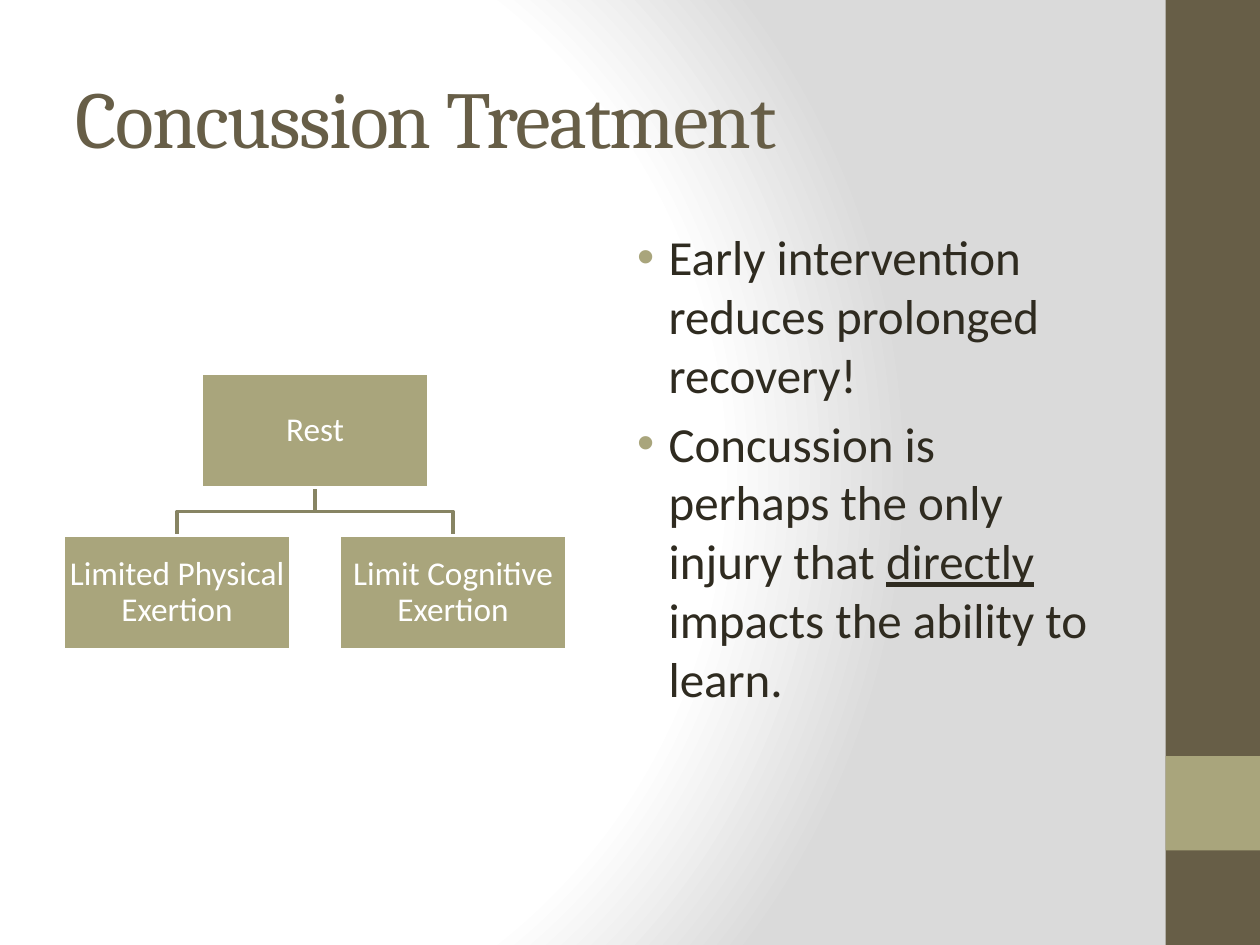
from lxml.etree import SubElement
from pptx import Presentation
from pptx.dml.color import RGBColor
from pptx.enum.shapes import MSO_SHAPE
from pptx.enum.text import MSO_ANCHOR, MSO_AUTO_SIZE, PP_ALIGN
from pptx.oxml import parse_xml
from pptx.oxml.ns import nsdecls, qn
from pptx.util import Pt

COLORS = {
    "brown": "675E47",
    "olive": "A9A57C",
    "line": "878463",
    "text": "2F2B20",
    "white": "FFFFFF",
    "gray": "DADADA",
}


def rgb(name):
    return RGBColor.from_string(COLORS[name])


def style_run(r, font, size, color):
    r.font.name = font
    r.font.size = Pt(size)
    r.font.color.rgb = rgb(color)


def add_rect(s, x, y, w, h, fill, line=None):
    sp = s.shapes.add_shape(MSO_SHAPE.RECTANGLE, Pt(x), Pt(y), Pt(w), Pt(h))
    sp.shadow.inherit = False
    sp.fill.solid()
    sp.fill.fore_color.rgb = rgb(fill)
    if line:
        sp.line.color.rgb = rgb(line)
        sp.line.width = Pt(2)
    else:
        sp.line.fill.background()
    return sp


def add_background(s):
    s.background.fill.gradient()
    grad = s.element.xpath(".//p:bgPr/a:gradFill")[0]
    stops = "".join(
        f'<a:gs pos="{pos * 1000}"><a:srgbClr val="{COLORS[color]}"/></a:gs>'
        for pos, color in ((0, "white"), (75, "white"), (100, "gray"))
    )
    grad.getparent().replace(grad, parse_xml(
        f'<a:gradFill {nsdecls("a")} rotWithShape="1"><a:gsLst>{stops}</a:gsLst>'
        '<a:path path="circle"><a:fillToRect l="20000" t="50000" r="100000" b="50000"/>'
        "</a:path></a:gradFill>"
    ))


def add_sidebar(s, x, y, w, h):
    add_rect(s, x, y, w, h, "brown")
    add_rect(s, x, y + 0.8 * h, w, w, "olive")


def add_title(s, x, y, w, h, text):
    sp = s.shapes.title
    sp.left, sp.top, sp.width, sp.height = Pt(x), Pt(y), Pt(w), Pt(h)
    tf = sp.text_frame
    tf.text = text
    tf.auto_size = MSO_AUTO_SIZE.NONE
    tf.vertical_anchor = MSO_ANCHOR.MIDDLE
    p = tf.paragraphs[0]
    p.alignment = PP_ALIGN.LEFT
    r = p.runs[0]
    style_run(r, "Cambria", 46, "brown")
    r.font._element.set("spc", "-100")


def add_box(s, x, y, w, h, text):
    tf = add_rect(s, x, y, w, h, "olive", "white").text_frame
    tf.word_wrap = True
    tf.vertical_anchor = MSO_ANCHOR.MIDDLE
    tf.margin_left = tf.margin_right = tf.margin_top = tf.margin_bottom = Pt(0.9)
    tf.text = text
    p = tf.paragraphs[0]
    p.alignment = PP_ALIGN.CENTER
    p.line_spacing = 0.9
    style_run(p.runs[0], "Calibri", 19, "white")


def add_branch(s, x1, y1, x2, y2):
    mid = (y1 + y2) / 2
    fb = s.shapes.build_freeform(Pt(x1), Pt(y1))
    fb.add_line_segments(
        [(Pt(x1), Pt(mid)), (Pt(x2), Pt(mid)), (Pt(x2), Pt(y2))], close=False)
    sp = fb.convert_to_shape()
    sp.shadow.inherit = False
    sp.fill.background()
    sp.line.color.rgb = rgb("line")
    sp.line.width = Pt(2)


def add_hierarchy(s, x, y, w, h, root, children):
    gap = 27.4
    box_w = (w - gap * (len(children) - 1)) / len(children)
    box_h = (h - gap) / 2
    child_y = y + box_h + gap
    lefts = [x + i * (box_w + gap) for i in range(len(children))]
    # Branches lie behind the boxes
    for left in reversed(lefts):
        add_branch(s, x + w / 2, y + box_h, left + box_w / 2, child_y)
    add_box(s, x + (w - box_w) / 2, y, box_w, box_h, root)
    for left, text in zip(lefts, children):
        add_box(s, left, child_y, box_w, box_h, text)


def add_bullets(s, x, y, w, h, items):
    tf = s.shapes.add_textbox(Pt(x), Pt(y), Pt(w), Pt(h)).text_frame
    tf.word_wrap = True
    for i, parts in enumerate(items):
        p = tf.add_paragraph() if i else tf.paragraphs[0]
        p.space_before = Pt(5.6)
        pPr = p._p.get_or_add_pPr()
        pPr.set("marL", str(Pt(27)))
        pPr.set("indent", str(Pt(-18)))
        color = SubElement(pPr, qn("a:buClr"))
        SubElement(color, qn("a:srgbClr"), val=COLORS["olive"])
        SubElement(pPr, qn("a:buFont"), typeface="Arial")
        SubElement(pPr, qn("a:buChar"), char="•")
        for text, underline in parts:
            r = p.add_run()
            r.text = text
            style_run(r, "Calibri", 28, "text")
            if underline:
                r.font.underline = True


def main():
    prs = Presentation()
    prs.slide_width, prs.slide_height = Pt(720), Pt(540)
    s = prs.slides.add_slide(prs.slide_layouts[5])
    add_background(s)
    add_sidebar(s, 666, 0, 54, 540)
    add_title(s, 36, 21.6, 600, 90, "Concussion Treatment")
    add_hierarchy(s, 36, 213.4, 288, 157.8, "Rest",
                  ["Limited Physical Exertion", "Limit Cognitive Exertion"])
    add_bullets(s, 348, 126, 288, 356.4, [
        [("Early intervention reduces prolonged recovery!", False)],
        [("Concussion is perhaps the only injury that ", False),
         ("directly", True),
         (" impacts the ability to learn.", False)],
    ])
    prs.save("out.pptx")


if __name__ == "__main__":
    main()
